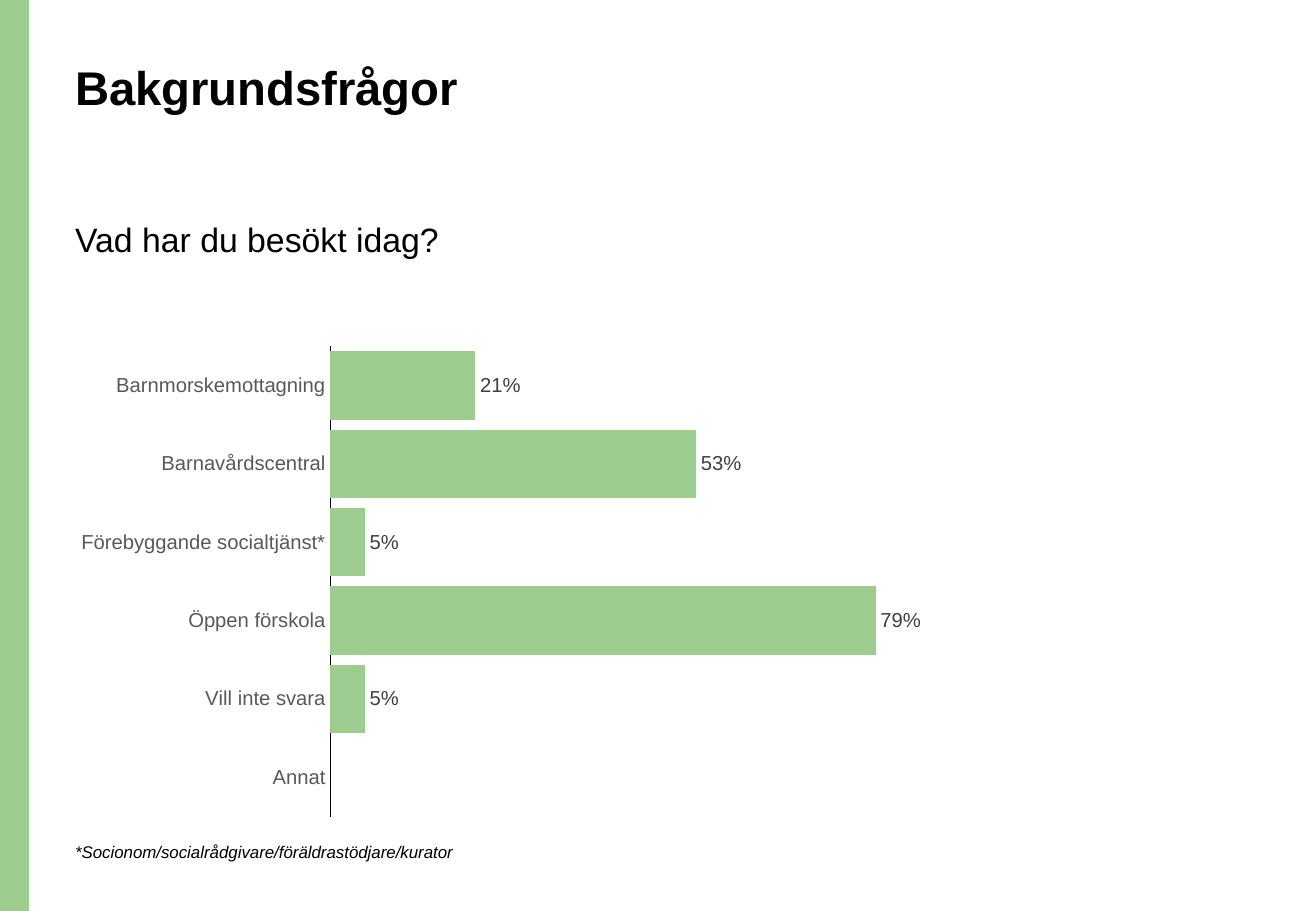
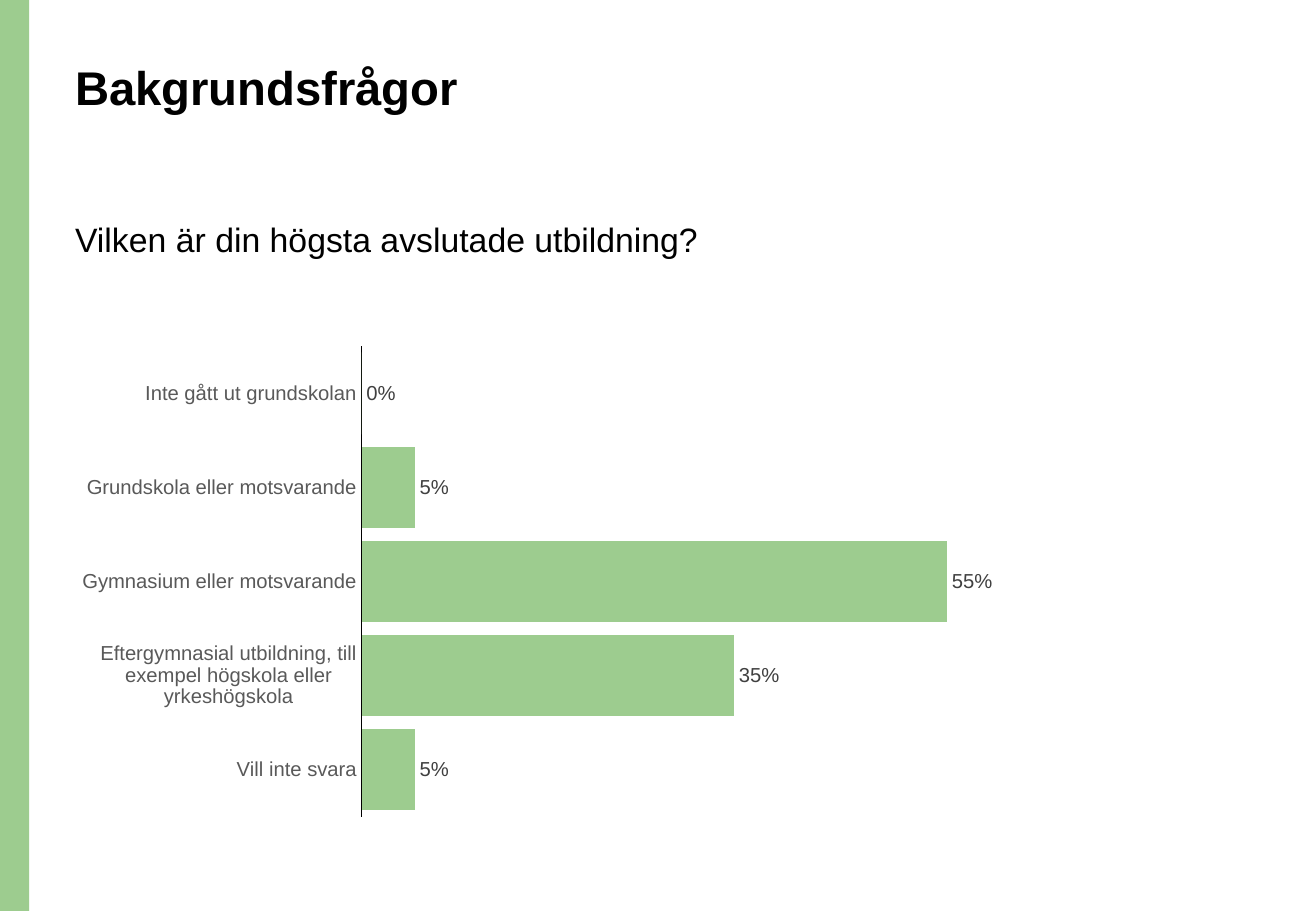
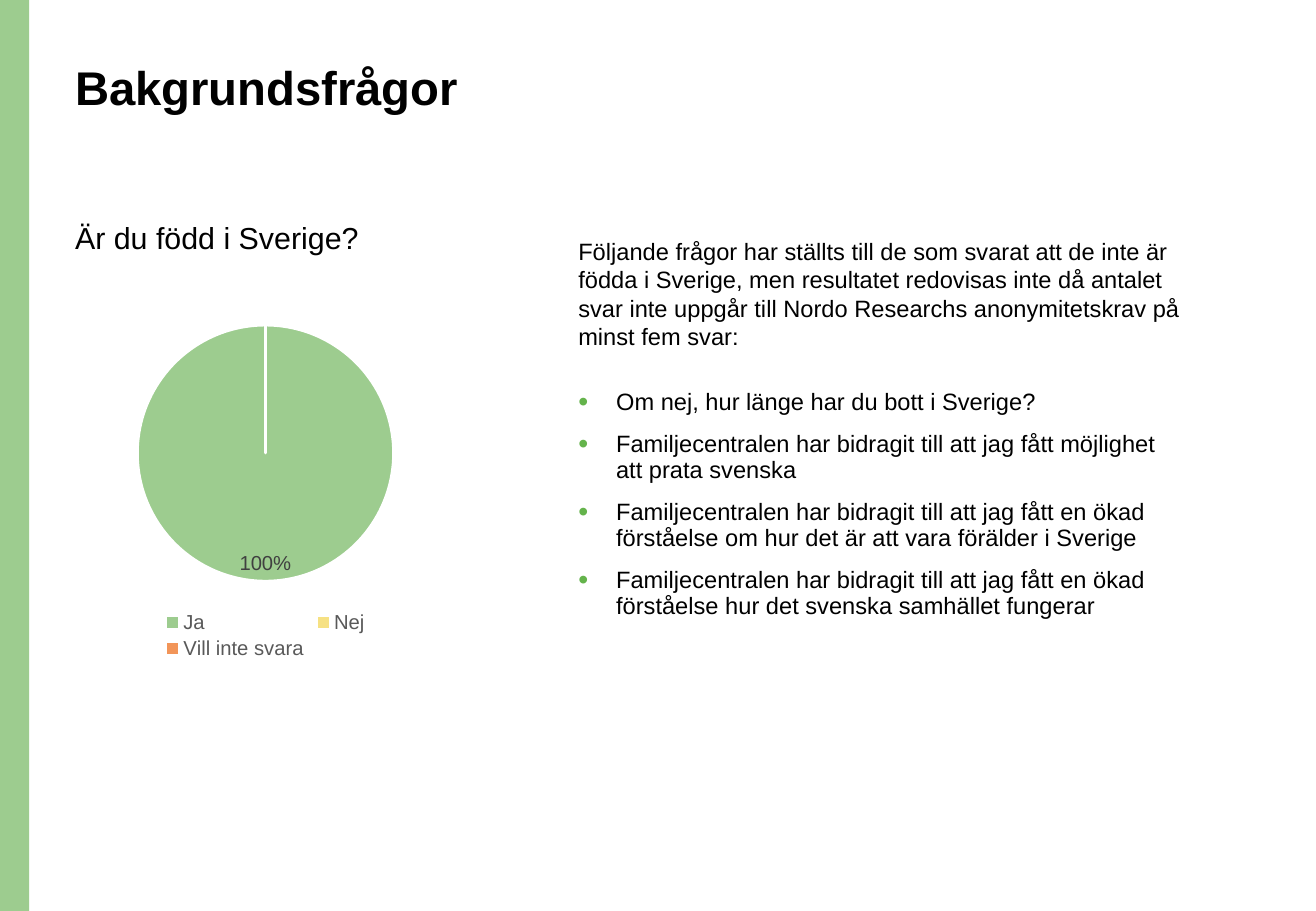
from lxml.etree import SubElement
from pptx import Presentation
from pptx.chart.data import CategoryChartData
from pptx.dml.color import RGBColor
from pptx.enum.chart import (XL_CHART_TYPE, XL_LABEL_POSITION,
                             XL_LEGEND_POSITION, XL_TICK_MARK)
from pptx.enum.shapes import MSO_SHAPE
from pptx.oxml.ns import qn
from pptx.util import Cm, Pt

FONT = "Arial"
GREEN, YELLOW, ORANGE = "9DCC8F", "F6E183", "F29559"
BULLET_GREEN = "64B34B"
BLACK, WHITE = "000000", "FFFFFF"
LABEL_GREY, AXIS_GREY = "404040", "595959"
PAGE_WIDTH, PAGE_HEIGHT = 27.51, 19.05
MARGIN = 1.32


def rgb(value):
    return RGBColor.from_string(value)


def style_font(font, size, color=BLACK, bold=False, italic=False):
    font.name, font.size = FONT, Pt(size)
    font.bold, font.italic = bold, italic
    font.color.rgb = rgb(color)


def fill_solid(target, color):
    target.fill.solid()
    target.fill.fore_color.rgb = rgb(color)


class Survey:
    """Holds the deck style and the current slide."""

    def __init__(self):
        self.deck = Presentation()
        self.deck.slide_width = Cm(PAGE_WIDTH)
        self.deck.slide_height = Cm(PAGE_HEIGHT)
        self.slide = None

    def new_slide(self, heading):
        self.slide = self.deck.slides.add_slide(self.deck.slide_layouts[6])
        band = self.slide.shapes.add_shape(
            MSO_SHAPE.RECTANGLE, 0, 0, Cm(0.61), Cm(PAGE_HEIGHT))
        band.shadow.inherit = False
        fill_solid(band, GREEN)
        band.line.fill.background()
        self.text([heading], (MARGIN, 1.22, 23.72, 2.59), 28, 0.9, bold=True)

    def text(self, lines, place, size, spacing=None, bullets=False, **style):
        box = self.slide.shapes.add_textbox(*map(Cm, place))
        frame = box.text_frame
        frame.word_wrap = True
        for index, line in enumerate(lines):
            paragraph = frame.paragraphs[0] if index == 0 else frame.add_paragraph()
            if spacing:
                paragraph.line_spacing = spacing
            if index:
                paragraph.space_before = Pt(10)
            if bullets:
                self.bullet(paragraph)
            run = paragraph.add_run()
            run.text = line
            style_font(run.font, size, **style)

    def bullet(self, paragraph):
        props = paragraph._p.get_or_add_pPr()
        indent = Cm(0.79)
        props.set("marL", str(indent))
        props.set("indent", str(-indent))
        color = SubElement(props, qn("a:buClr"))
        SubElement(color, qn("a:srgbClr")).set("val", BULLET_GREEN)
        SubElement(props, qn("a:buSzPct")).set("val", "120000")
        SubElement(props, qn("a:buFont")).set("typeface", FONT)
        SubElement(props, qn("a:buChar")).set("char", "•")

    def question(self, wording, width, height=1.88, size=20):
        self.text([wording], (MARGIN, 4.55, width, height), size, 0.9)

    def chart(self, kind, answers, place, number_format, label_position):
        data = CategoryChartData(number_format="0%")
        data.categories = list(answers)
        data.add_series("Series 1", list(answers.values()))
        chart = self.slide.shapes.add_chart(kind, *map(Cm, place), data).chart
        chart.has_title = False
        chart.has_legend = False
        style_font(chart.font, 10)
        plot = chart.plots[0]
        plot.vary_by_categories = False
        plot.has_data_labels = True
        labels = plot.data_labels
        labels.show_value = True
        labels.show_percentage = False
        labels.number_format = number_format
        labels.number_format_is_linked = False
        labels.position = label_position
        style_font(labels.font, 12, LABEL_GREY)
        return chart

    def bars(self, answers, width, maximum):
        chart = self.chart(XL_CHART_TYPE.BAR_CLUSTERED, answers,
                           (MARGIN, 7.04, width, 10.24), "0%",
                           XL_LABEL_POSITION.OUTSIDE_END)
        chart.plots[0].gap_width = 15
        fill_solid(chart.plots[0].series[0].format, GREEN)
        # Answers from top to bottom, shares without a visible axis
        answer_axis, share_axis = chart.category_axis, chart.value_axis
        answer_axis.reverse_order = True
        answer_axis.major_tick_mark = XL_TICK_MARK.NONE
        answer_axis.minor_tick_mark = XL_TICK_MARK.NONE
        answer_axis.format.line.color.rgb = rgb(BLACK)
        answer_axis.format.line.width = Pt(0.75)
        style_font(answer_axis.tick_labels.font, 12, AXIS_GREY)
        share_axis.minimum_scale, share_axis.maximum_scale = 0, maximum
        share_axis.has_major_gridlines = False
        share_axis.visible = False

    def pie(self, answers, colors, place):
        chart = self.chart(XL_CHART_TYPE.PIE, answers, place,
                           '[<0.01]"";[>0.01]0%', XL_LABEL_POSITION.INSIDE_END)
        chart.plots[0].vary_by_categories = True
        for index, color in enumerate(colors):
            slice_format = chart.plots[0].series[0].points[index].format
            fill_solid(slice_format, color)
            slice_format.line.color.rgb = rgb(WHITE)
            slice_format.line.width = Pt(1.5)
        chart.has_legend = True
        chart.legend.position = XL_LEGEND_POSITION.BOTTOM
        chart.legend.include_in_layout = False
        style_font(chart.legend.font, 12, AXIS_GREY)


def main():
    survey = Survey()
    heading = "Bakgrundsfrågor"

    # Visited services
    survey.new_slide(heading)
    survey.question("Vad har du besökt idag?", 16.51)
    survey.bars({
        "Barnmorskemottagning": 0.21,
        "Barnavårdscentral": 0.53,
        "Förebyggande socialtjänst*": 0.05,
        "Öppen förskola": 0.79,
        "Vill inte svara": 0.05,
        "Annat": None,
    }, 18.95, 0.9)
    survey.text(["*Socionom/socialrådgivare/föräldrastödjare/kurator"],
                (MARGIN, 17.48, 13.77, 0.69), 10, italic=True)

    # Education
    survey.new_slide(heading)
    survey.question("Vilken är din högsta avslutade utbildning?", 15.32)
    survey.bars({
        "Inte gått ut grundskolan": 0,
        "Grundskola eller motsvarande": 0.05,
        "Gymnasium eller motsvarande": 0.55,
        "Eftergymnasial utbildning, till exempel högskola eller yrkeshögskola": 0.35,
        "Vill inte svara": 0.05,
    }, 19.99, 0.6)

    # Country of birth
    survey.new_slide(heading)
    survey.question("Är du född i Sverige?", 11.63, 1.17, 18)
    survey.pie({"Ja": 1, "Nej": 0, "Vill inte svara": 0},
               (GREEN, YELLOW, ORANGE), (MARGIN, 6.45, 8.46, 7.44))
    notes_left = 11.84
    survey.text([
        "Om nej, hur länge har du bott i Sverige?",
        "Familjecentralen har bidragit till att jag fått möjlighet att prata svenska",
        "Familjecentralen har bidragit till att jag fått en ökad förståelse om hur "
        "det är att vara förälder i Sverige",
        "Familjecentralen har bidragit till att jag fått en ökad förståelse hur "
        "det svenska samhället fungerar",
    ], (notes_left, 8.03, 12.78, 5.26), 14, 0.9, bullets=True)
    survey.text([
        "Följande frågor har ställts till de som svarat att de inte är födda i "
        "Sverige, men resultatet redovisas inte då antalet svar inte uppgår till "
        "Nordo Researchs anonymitetskrav på minst fem svar:",
    ], (notes_left, 4.83, 13.23, 2.64), 14)

    survey.deck.save("out.pptx")


if __name__ == "__main__":
    main()
